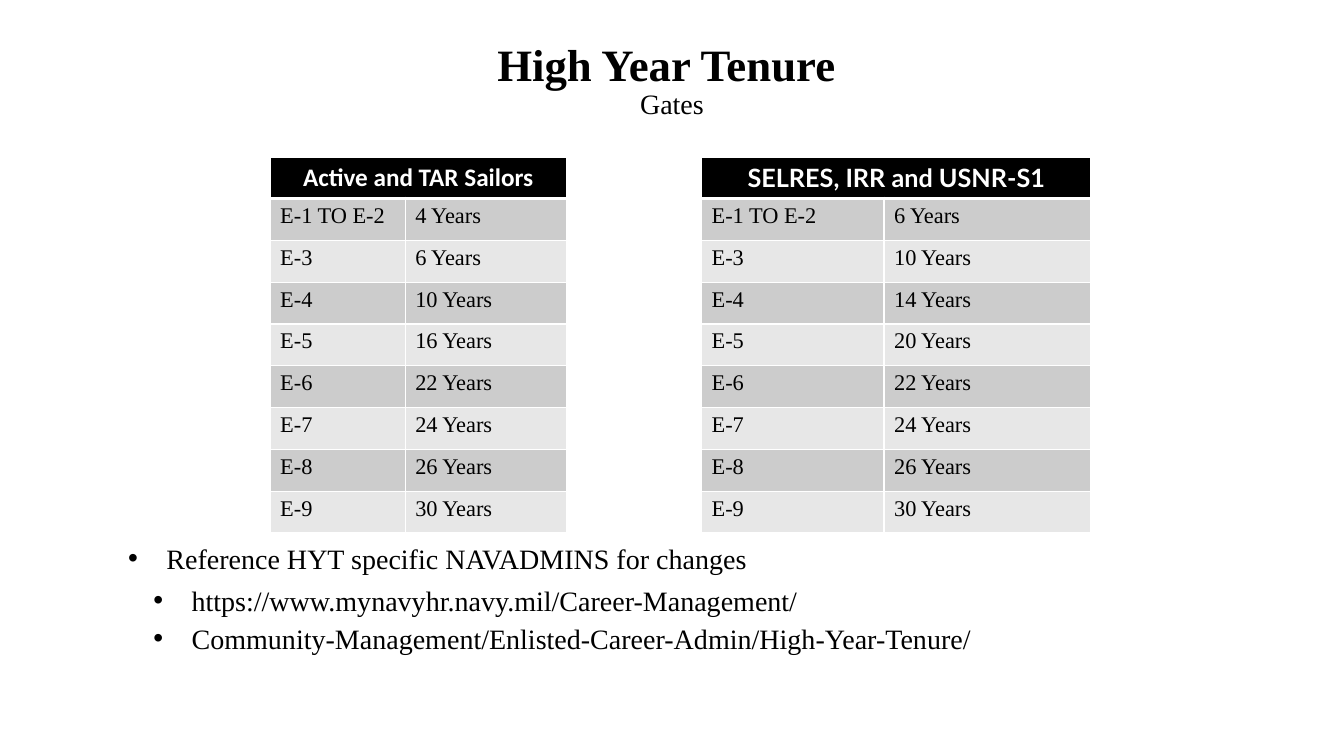
from lxml import etree
from pptx import Presentation
from pptx.dml.color import RGBColor
from pptx.enum.text import MSO_ANCHOR, MSO_AUTO_SIZE, PP_ALIGN
from pptx.oxml.ns import qn
from pptx.util import Inches, Pt

CENTER, LEFT = PP_ALIGN.CENTER, PP_ALIGN.LEFT
MIDDLE, TOP = MSO_ANCHOR.MIDDLE, MSO_ANCHOR.TOP
FIXED, GROW = MSO_AUTO_SIZE.NONE, MSO_AUTO_SIZE.SHAPE_TO_FIT_TEXT

COLORS = {"ink": "000000", "paper": "FFFFFF", "dark band": "CCCCCC", "light band": "E7E7E7"}
SERIF = "Times New Roman"
GRID = 100  # columns and rows across the slide

# Content
GRADES = ["E-1 TO E-2", "E-3", "E-4", "E-5", "E-6", "E-7", "E-8", "E-9"]
TENURE_TABLES = [
    dict(heading="Active and TAR Sailors", font="Calibri", left=20.1,
         widths=(10.05, 12), years=[4, 6, 10, 16, 22, 24, 26, 30]),
    dict(heading="SELRES, IRR and USNR-S1", font="Lato", left=52.2,
         widths=(13.58, 15.4), years=[6, 10, 14, 20, 22, 24, 26, 30]),
]
REFERENCES = [
    ("Reference HYT specific NAVADMINS for changes", 0),
    ("https://www.mynavyhr.navy.mil/Career-Management/", 1),
    ("Community-Management/Enlisted-Career-Admin/High-Year-Tenure/", 1),
]


def add_span(para, text, size=16, font=SERIF, color="ink", bold=False):
    """Add formatted text to a paragraph."""
    span = para.add_run()
    span.text = text
    span.font.size, span.font.name, span.font.bold = Pt(size), font, bold
    span.font.color.rgb = RGBColor.from_string(COLORS[color])


class TenureSlide:
    """Holds the style grid and the current slide."""

    def __init__(self, deck):
        self.column = deck.slide_width / GRID
        self.row = deck.slide_height / GRID
        self.page = deck.slides.add_slide(deck.slide_layouts[1])

    def across(self, columns):
        return round(columns * self.column)

    def down(self, rows):
        return round(rows * self.row)

    def place(self, box, left, top, width, height):
        box.left, box.top = self.across(left), self.down(top)
        box.width, box.height = self.across(width), self.down(height)

    def title(self, heading, subheading):
        box = self.page.shapes.title
        self.place(box, 0, 0, 100, 21.6)
        frame = box.text_frame
        frame.auto_size, frame.vertical_anchor = FIXED, MIDDLE
        para = frame.paragraphs[0]
        para.alignment, para.line_spacing = CENTER, 0.9
        add_span(para, heading + " ", size=32, bold=True)
        para.add_line_break()
        add_span(para, subheading, size=20)

    def bullets(self, items):
        box = self.page.placeholders[1]
        self.place(box, 8.78, 70.53, 82.5, 21.6)
        frame = box.text_frame
        frame.word_wrap, frame.auto_size, frame.vertical_anchor = True, GROW, TOP
        frame.margin_top = Inches(0.08)
        for index, (text, level) in enumerate(items):
            para = frame.add_paragraph() if index else frame.paragraphs[0]
            para.level, para.alignment = level, LEFT
            para.space_before = Pt(3 if index else 0)
            para.space_after = Pt(0 if level else 3)
            # Hanging bullet
            settings = para._p.get_or_add_pPr()
            settings.set("marL", str(Inches(0.38 + 0.25 * level)))
            settings.set("indent", str(Inches(-0.38)))
            etree.SubElement(settings, qn("a:buFont")).set("typeface", "Arial")
            etree.SubElement(settings, qn("a:buChar")).set("char", "•")
            add_span(para, text, size=20)

    def cell(self, cell, text, fill, align=LEFT, top_line=1, bottom_line=1, **style):
        # Borders come before the fill
        settings = cell._tc.get_or_add_tcPr()
        for side, weight in zip("LRTB", (1, 1, top_line, bottom_line)):
            line = etree.SubElement(settings, qn(f"a:ln{side}"), w=str(Pt(weight)))
            paint = etree.SubElement(line, qn("a:solidFill"))
            etree.SubElement(paint, qn("a:srgbClr")).set("val", COLORS["paper"])
        cell.fill.solid()
        cell.fill.fore_color.rgb = RGBColor.from_string(COLORS[fill])
        if text:
            para = cell.text_frame.paragraphs[0]
            para.alignment = align
            add_span(para, text, **style)

    def table(self, heading, font, left, widths, years):
        heights = [5.47] + [5.53] * len(years)
        grid = self.page.shapes.add_table(
            len(heights), len(widths), self.across(left), self.down(20.8),
            self.across(sum(widths)), self.down(sum(heights))).table
        for column, width in zip(grid.columns, widths):
            column.width = self.across(width)
        for row, height in zip(grid.rows, heights):
            row.height = self.down(height)
        # Heading across both columns
        grid.cell(0, 0).merge(grid.cell(0, 1))
        for index, text in enumerate((heading, "")):
            self.cell(grid.cell(0, index), text, "ink", align=CENTER, bottom_line=3,
                      size=18, font=font, color="paper", bold=True)
        # Banded rows
        for number, (grade, limit) in enumerate(zip(GRADES, years), start=1):
            band = "dark band" if number % 2 else "light band"
            for index, text in enumerate((grade, f"{limit} Years")):
                self.cell(grid.cell(number, index), text, band,
                          top_line=3 if number == 1 else 1)


def main():
    deck = Presentation()
    deck.slide_width, deck.slide_height = Inches(13.33), Inches(7.5)
    slide = TenureSlide(deck)
    slide.title("High Year Tenure", "Gates")
    for tenure in TENURE_TABLES:
        slide.table(**tenure)
    slide.bullets(REFERENCES)
    deck.save("out.pptx")


if __name__ == "__main__":
    main()
